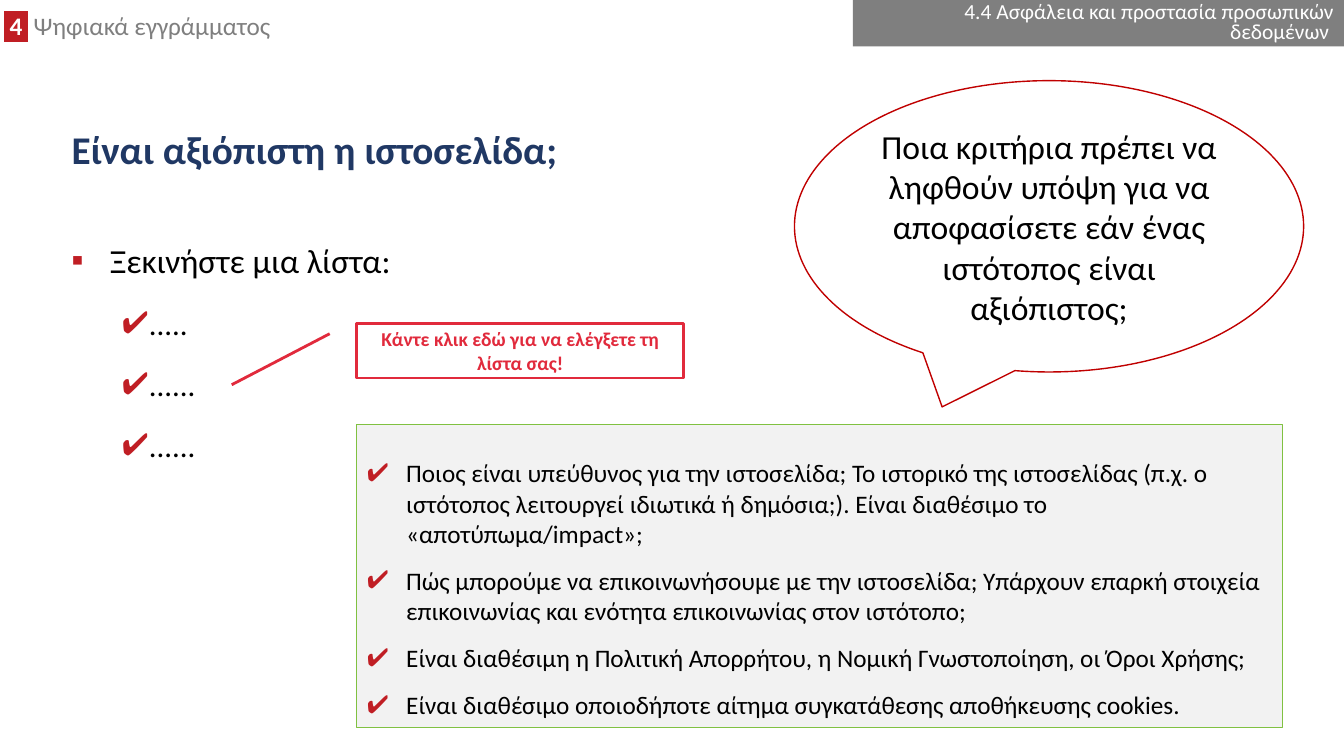
from lxml import etree
from pptx import Presentation
from pptx.dml.color import RGBColor
from pptx.enum import shapes, text
from pptx.oxml import ns
from pptx.util import Inches, Pt

CHAPTER = [
    (" 4 ", {"color": "FFFFFF", "bold": True, "highlight": "C01E24"}),
    (" Ψηφιακά εγγράμματος", {"color": "7F7F7F"}),
]
SECTION = "4.4 Ασφάλεια και προστασία προσωπικών δεδομένων "
TITLE = "Είναι αξιόπιστη η ιστοσελίδα;"
LIST_HEADING = "Ξεκινήστε μια λίστα:"
LIST_ITEMS = [".....", "......", "......"]
QUESTION = "Ποια κριτήρια πρέπει να ληφθούν υπόψη για να αποφασίσετε εάν ένας ιστότοπος είναι αξιόπιστος;"
HINT = "Κάντε κλικ εδώ για να ελέγξετε τη λίστα σας!"
CRITERIA = [
    "Ποιος είναι υπεύθυνος για την ιστοσελίδα; Το ιστορικό της ιστοσελίδας (π.χ. ο ιστότοπος λειτουργεί ιδιωτικά ή δημόσια;). Είναι διαθέσιμο το «αποτύπωμα/impact»;",
    "Πώς μπορούμε να επικοινωνήσουμε με την ιστοσελίδα; Υπάρχουν επαρκή στοιχεία επικοινωνίας και ενότητα επικοινωνίας στον ιστότοπο;",
    "Είναι διαθέσιμη η Πολιτική Απορρήτου, η Νομική Γνωστοποίηση, οι Όροι Χρήσης;",
    "Είναι διαθέσιμο οποιοδήποτε αίτημα συγκατάθεσης αποθήκευσης cookies.",
]
FONT = "Calibri"
RED = "C01E24"
LEFT, CENTER, RIGHT = text.PP_ALIGN.LEFT, text.PP_ALIGN.CENTER, text.PP_ALIGN.RIGHT
TOP, MIDDLE = text.MSO_ANCHOR.TOP, text.MSO_ANCHOR.MIDDLE


def rgb(value):
    return RGBColor.from_string(value)


def place(shape, left, top, width, height):
    shape.left, shape.top = Inches(left), Inches(top)
    shape.width, shape.height = Inches(width), Inches(height)


def prepare_frame(shape, anchor=TOP, top_inset=0.05):
    frame = shape.text_frame
    frame.word_wrap = True
    frame.auto_size = text.MSO_AUTO_SIZE.NONE
    frame.vertical_anchor = anchor
    frame.margin_left = frame.margin_right = Inches(0.1)
    frame.margin_top, frame.margin_bottom = Inches(top_inset), Inches(0.05)
    return frame


def add_bullet(paragraph, character, margin, hanging):
    properties = paragraph._p.get_or_add_pPr()
    properties.set("marL", str(Inches(margin)))
    properties.set("indent", str(-Inches(hanging)))
    color = etree.SubElement(properties, ns.qn("a:buClr"))
    etree.SubElement(color, ns.qn("a:srgbClr"), val=RED)
    etree.SubElement(properties, ns.qn("a:buFont"), typeface=FONT)
    etree.SubElement(properties, ns.qn("a:buChar"), char=character)


def add_run(paragraph, content, size, color="000000", bold=False, highlight=None):
    run = paragraph.add_run()
    run.text = content
    run.font.size, run.font.bold, run.font.name = Pt(size), bold, FONT
    run.font.color.rgb = rgb(color)
    if highlight:
        marker = etree.Element(ns.qn("a:highlight"))
        etree.SubElement(marker, ns.qn("a:srgbClr"), val=highlight)
        run._r.rPr.find(ns.qn("a:solidFill")).addnext(marker)


def write(frame, content, size, align=LEFT, spacing=1.0, before=0, after=0,
          level=0, bullet=None, **run_format):
    paragraph = frame.paragraphs[0]
    if paragraph.runs:
        paragraph = frame.add_paragraph()
    if bullet:
        add_bullet(paragraph, *bullet)
    paragraph.level, paragraph.alignment = level, align
    paragraph.line_spacing = spacing
    paragraph.space_before, paragraph.space_after = Pt(before), Pt(after)
    runs = [(content, run_format)] if isinstance(content, str) else content
    for words, options in runs:
        add_run(paragraph, words, size, **options)


def add_box(slide, kind, bounds, fill, line=None, line_width=1):
    shape = slide.shapes.add_shape(kind, *map(Inches, bounds))
    shape.shadow.inherit = False
    shape.fill.solid()
    shape.fill.fore_color.rgb = rgb(fill)
    if line:
        shape.line.color.rgb = rgb(line)
        shape.line.width = Pt(line_width)
    else:
        shape.line.fill.background()
    return shape


def main():
    presentation = Presentation()
    presentation.slide_width, presentation.slide_height = Inches(13.33), Inches(7.5)
    slide = presentation.slides.add_slide(presentation.slide_layouts[1])
    kinds = shapes.MSO_SHAPE

    title = slide.shapes.title
    place(title, 0.61, 1.18, 12.1, 0.66)
    write(prepare_frame(title, MIDDLE), TITLE, 28, spacing=0.9, color="203864", bold=True)

    body = slide.placeholders[1]
    place(body, 0.61, 2.25, 7.95, 4.7)
    frame = prepare_frame(body)
    write(frame, LIST_HEADING, 24, spacing=1.2, bullet=("▪", 0.38, 0.38))
    for item in LIST_ITEMS:
        write(frame, item, 22, spacing=1.2, before=12, level=1, bullet=("✔", 0.75, 0.25))

    chapter = slide.shapes.add_textbox(*map(Inches, (-0.06, 0.11, 9.52, 0.35)))
    write(prepare_frame(chapter), CHAPTER, 18, spacing=0.8)

    bubble = add_box(slide, kinds.OVAL_CALLOUT, (7.88, 0.8, 5.05, 2.89), "FFFFFF", "C00000")
    bubble.adjustments[0], bubble.adjustments[1] = -0.21, 0.62
    write(prepare_frame(bubble, MIDDLE), QUESTION, 24, align=CENTER)

    panel = add_box(slide, kinds.RECTANGLE, (3.54, 4.21, 9.18, 3.01), "F2F2F2", "80C141", 0.75)
    frame = prepare_frame(panel, top_inset=0.33)
    for index, criterion in enumerate(CRITERIA):
        write(frame, criterion, 18, before=6 if index else 0, after=6, level=1,
              bullet=("✔", 0.39, 0.39))

    hint = add_box(slide, kinds.LINE_CALLOUT_1, (3.54, 3.21, 3.24, 0.54), "FFFFFF", "E12A3C", 2)
    write(prepare_frame(hint, MIDDLE), HINT, 14, align=CENTER, color="E12A3C", bold=True)

    banner = add_box(slide, kinds.RECTANGLE, (8.46, 0, 4.87, 0.46), "7F7F7F")
    write(prepare_frame(banner, MIDDLE), SECTION, 15.3, align=RIGHT, spacing=0.8, color="FFFFFF")

    presentation.save("out.pptx")


if __name__ == "__main__":
    main()
